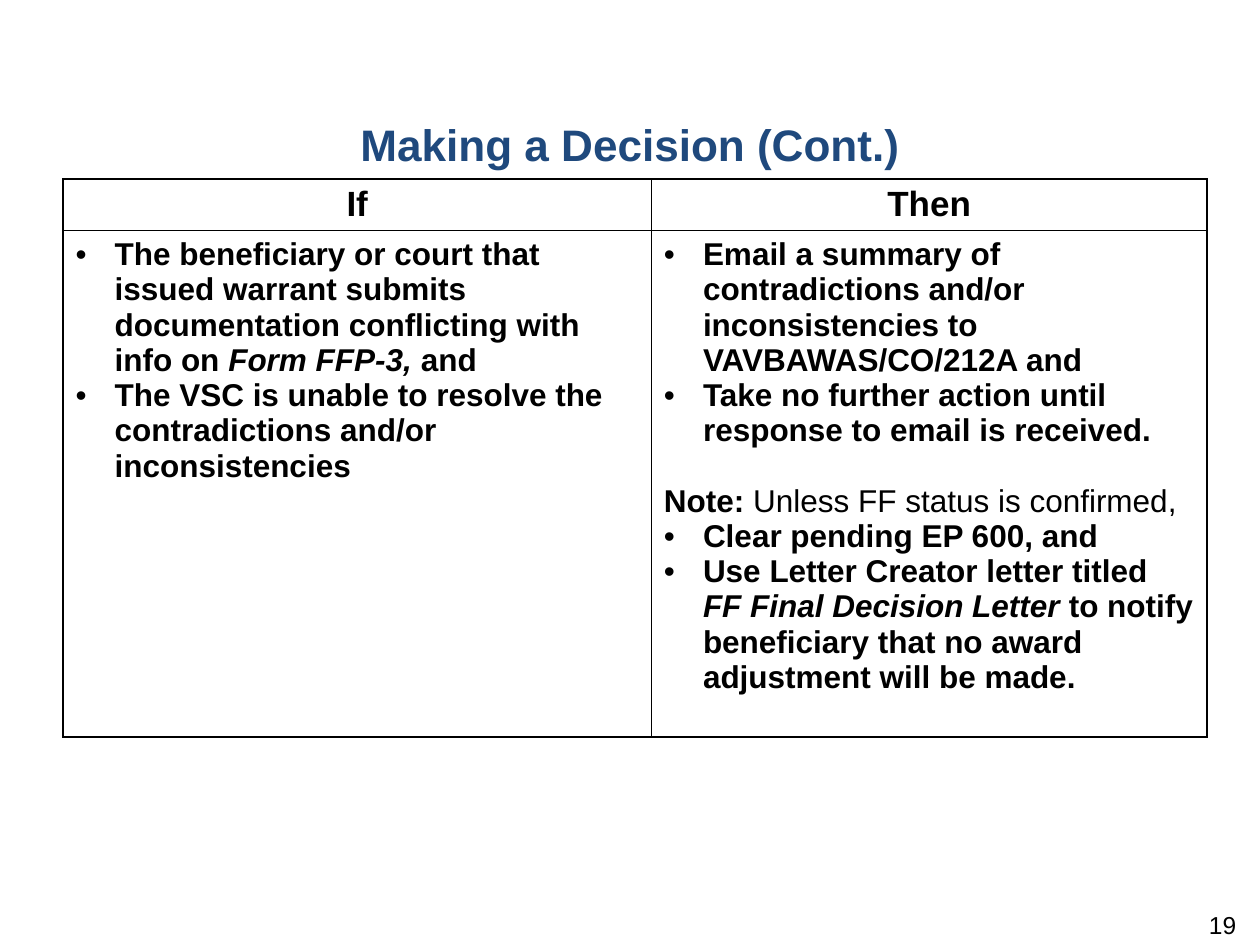
from lxml import etree
from pptx import Presentation
from pptx.dml import color
from pptx.enum import text
from pptx.oxml import ns
from pptx.util import Inches, Pt

FONT = "Arial"
BLACK, WHITE, NAVY = "000000", "FFFFFF", "1F497D"
BOLD, ITALIC, PLAIN = (True, False), (True, True), (False, False)

CONDITIONS = [
    (True, [("The beneficiary or court that issued warrant submits documentation "
             "conflicting with info on ", BOLD), ("Form FFP-3,", ITALIC), (" and", BOLD)]),
    (True, [("The VSC is unable to resolve the contradictions and/or inconsistencies", BOLD)]),
]
ACTIONS = [
    (True, [("Email a summary of contradictions and/or inconsistencies to "
             "VAVBAWAS/CO/212A and", BOLD)]),
    (True, [("Take no further action until response to email is received.", BOLD)]),
    (False, [("Note:", BOLD), (" Unless FF status is confirmed,", PLAIN)]),
    (True, [("Clear pending EP 600, and", BOLD)]),
    (True, [("Use Letter Creator letter titled ", BOLD), ("FF Final Decision Letter ", ITALIC),
            ("to notify beneficiary that no award adjustment will be made.", BOLD)]),
]


def rgb(value):
    """Turn a hex string into a colour."""
    return color.RGBColor.from_string(value)


def set_font(font, size, shade=BLACK, bold=None):
    """Set face, size, colour and weight of a font."""
    font.name, font.size, font.bold = FONT, Pt(size), bold
    font.color.rgb = rgb(shade)


def place(shape, box):
    """Move a shape to a box given as left, top, width, height."""
    shape.left, shape.top, shape.width, shape.height = map(Inches, box)


def add_title(page, box, words):
    """Fill and format the title placeholder."""
    title = page.shapes.title
    place(title, box)
    frame = title.text_frame
    frame.text = words
    frame.vertical_anchor = text.MSO_ANCHOR.MIDDLE
    para = frame.paragraphs[0]
    para.alignment = text.PP_ALIGN.CENTER
    set_font(para.font, 25.2, NAVY, True)


def style_cell(cell):
    """Give a cell black borders and a white fill."""
    properties = cell._tc.get_or_add_tcPr()
    for side in ("lnL", "lnR", "lnT", "lnB"):
        line = etree.SubElement(properties, ns.qn("a:" + side), w=str(Pt(1)))
        fill = etree.SubElement(line, ns.qn("a:solidFill"))
        etree.SubElement(fill, ns.qn("a:srgbClr"), val=BLACK)
    cell.fill.solid()
    cell.fill.fore_color.rgb = rgb(WHITE)


def add_bullet(para):
    """Give a paragraph a hanging round bullet."""
    properties = para._p.get_or_add_pPr()
    properties.set("marL", str(Inches(0.31)))
    properties.set("indent", str(-Inches(0.31)))
    etree.SubElement(properties, ns.qn("a:buFont"), typeface=FONT)
    etree.SubElement(properties, ns.qn("a:buChar"), char="•")


def fill_body(cell, items):
    """Write bulleted items and set-off notes into a cell."""
    frame = cell.text_frame
    for index, (bulleted, spans) in enumerate(items):
        para = frame.add_paragraph() if index else frame.paragraphs[0]
        if bulleted:
            add_bullet(para)
        else:
            para.space_before = Pt(20)
        set_font(para.font, 18)
        for words, (bold, italic) in spans:
            span = para.add_run()
            span.text = words
            span.font.bold, span.font.italic = bold, italic


def add_decision_table(page, box, columns, rows):
    """Add the two-column table of conditions and actions."""
    table = page.shapes.add_table(2, 2, *map(Inches, box)).table
    table.first_row = table.horz_banding = False
    for column, width in zip(table.columns, columns):
        column.width = Inches(width)
    for row, height in zip(table.rows, rows):
        row.height = Inches(height)
    for cell in table.iter_cells():
        style_cell(cell)
    for index, (heading, items) in enumerate((("If", CONDITIONS), ("Then", ACTIONS))):
        header = table.cell(0, index)
        header.text = heading
        para = header.text_frame.paragraphs[0]
        para.alignment = text.PP_ALIGN.CENTER
        set_font(para.font, 20, bold=True)
        fill_body(table.cell(1, index), items)


def add_page_number(page, box, number):
    """Add the right-aligned page number."""
    frame = page.shapes.add_textbox(*map(Inches, box)).text_frame
    frame.word_wrap = True
    frame.margin_top = 0
    para = frame.paragraphs[0]
    para.text = number
    para.alignment = text.PP_ALIGN.RIGHT
    set_font(para.font, 14)


def main():
    """Build and save the deck."""
    deck = Presentation()
    deck.slide_width, deck.slide_height = Inches(10), Inches(7.5)
    page = deck.slides.add_slide(deck.slide_layouts.get_by_name("Title Only"))
    add_title(page, (0, 0.87, 10, 0.55), "Making a Decision (Cont.)")
    add_decision_table(page, (0.5, 1.42, 9.08, 4.43), (4.67, 4.41), (0.41, 4.02))
    add_page_number(page, (7.58, 7.22, 2.33, 0.4), "19")
    deck.save("out.pptx")


if __name__ == "__main__":
    main()
